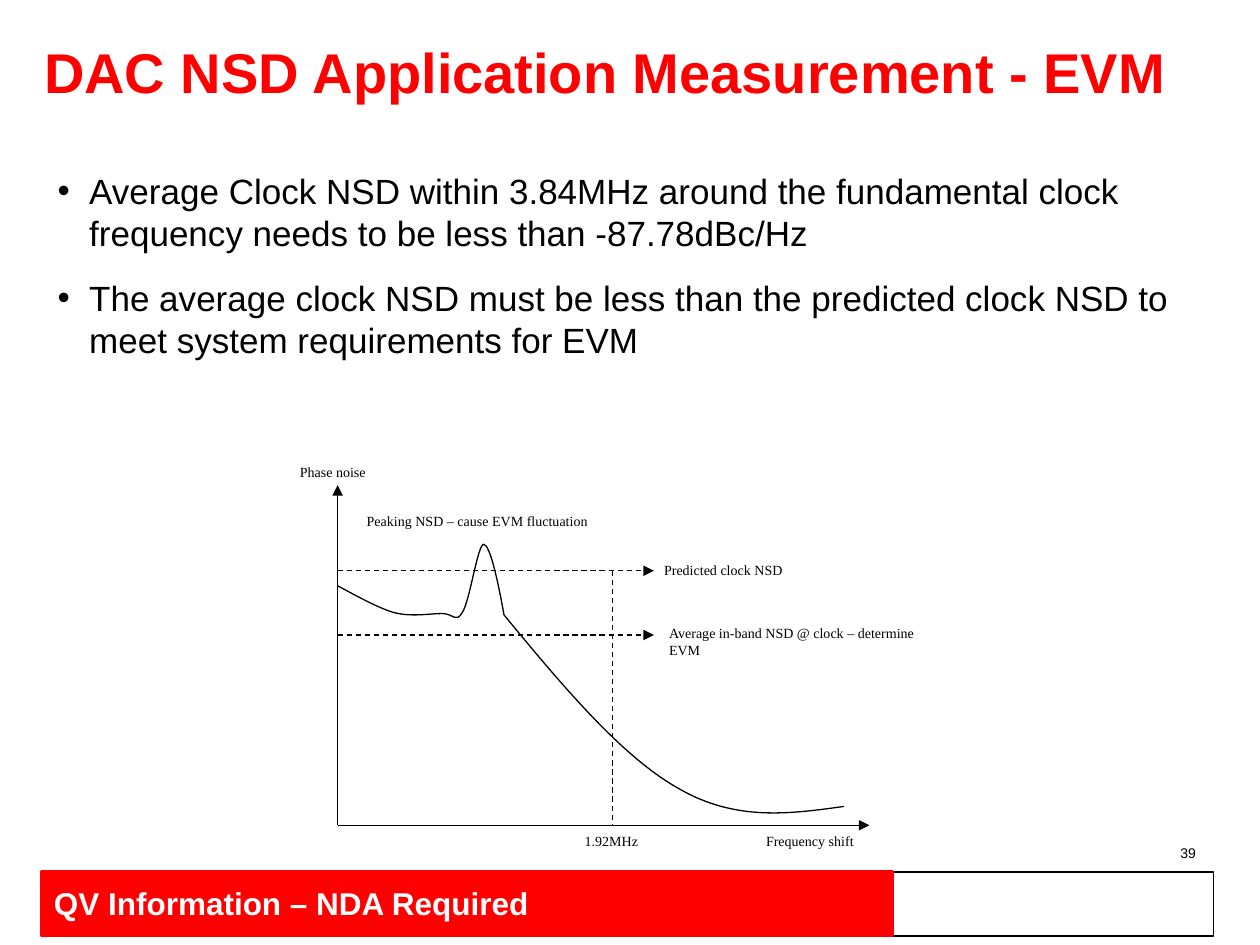
from lxml.etree import SubElement
from pptx import Presentation
from pptx.dml.color import RGBColor
from pptx.enum.dml import MSO_LINE
from pptx.enum.shapes import MSO_CONNECTOR, MSO_SHAPE
from pptx.enum.text import MSO_ANCHOR, PP_ALIGN
from pptx.oxml.ns import qn
from pptx.util import Inches, Pt

RED, BLACK, WHITE = "FF0000", "000000", "FFFFFF"
SANS, SERIF = "Arial", "Times New Roman"

# Plot geometry in inches
AXIS_X, AXIS_Y = 2.68, 6.55
AXIS_TOP, AXIS_RIGHT = 3.85, 6.9
PREDICTED_Y, AVERAGE_Y = 4.53, 5.04
BAND_EDGE_X, LEVEL_END_X = 4.86, 5.19

# Each curve: start point, then (control, control, end) for every segment
PEAK_CURVE = ((2.68, 4.65), [
    ((2.83, 4.73), (2.99, 4.82), (3.12, 4.86)),
    ((3.26, 4.90), (3.41, 4.87), (3.51, 4.87)),
    ((3.60, 4.87), (3.62, 4.95), (3.67, 4.86)),
    ((3.73, 4.77), (3.79, 4.32), (3.84, 4.32)),
    ((3.89, 4.33), (3.95, 4.60), (4.00, 4.88)),
])
FALLING_CURVE = ((4.0, 4.88), [
    ((4.47, 5.45), (4.94, 6.01), (5.39, 6.26)),
    ((5.84, 6.52), (6.27, 6.46), (6.70, 6.40)),
])

# Plot labels: text, left, top, width
LABELS = [
    ("Predicted clock NSD", 5.2, 4.43, 1.18),
    ("Peaking NSD – cause EVM fluctuation", 2.84, 4.04, 2.34),
    ("1.92MHz", 4.57, 6.58, 0.58),
    ("Average in-band NSD @ clock – determine EVM", 5.24, 4.93, 2.1),
    ("Phase noise", 2.31, 3.65, 0.77),
    ("Frequency shift", 6.01, 6.58, 1.03),
]

BULLETS = [
    "Average Clock NSD within 3.84MHz around the fundamental clock "
    "frequency needs to be less than -87.78dBc/Hz",
    "The average clock NSD must be less than the predicted clock NSD to "
    "meet system requirements for EVM",
]


def color(hex_value):
    return RGBColor.from_string(hex_value)


def style_font(paragraph, size, name=SANS, hex_value=BLACK, bold=False):
    font = paragraph.font
    font.size, font.name, font.bold = Pt(size), name, bold
    font.color.rgb = color(hex_value)


def style_line(line, width=0.75, hex_value=BLACK):
    line.color.rgb = color(hex_value)
    line.width = Pt(width)


def add_text_frame(slide, left, top, width, height):
    box = slide.shapes.add_textbox(*map(Inches, (left, top, width, height)))
    box.text_frame.word_wrap = True
    return box.text_frame


def add_bar(slide, left, top, width, height, line_width, fill=None):
    bar = slide.shapes.add_shape(
        MSO_SHAPE.RECTANGLE, *map(Inches, (left, top, width, height)))
    bar.shadow.inherit = False
    if fill:
        bar.fill.solid()
        bar.fill.fore_color.rgb = color(fill)
    else:
        bar.fill.background()
    style_line(bar.line, line_width, fill or BLACK)
    return bar


def add_footer(slide):
    add_bar(slide, 0.37, 6.92, 9.26, 0.51, 0.75)
    frame = add_bar(slide, 0.33, 6.92, 6.75, 0.5, 2, RED).text_frame
    frame.vertical_anchor = MSO_ANCHOR.MIDDLE
    paragraph = frame.paragraphs[0]
    paragraph.text = "QV Information – NDA Required"
    paragraph.alignment = PP_ALIGN.LEFT
    style_font(paragraph, 18, hex_value=WHITE, bold=True)


def add_title(slide, text):
    title = slide.shapes.title
    title.left, title.top, title.width, title.height = map(
        Inches, (0.25, 0.16, 9.25, 0.89))
    title.text_frame.vertical_anchor = MSO_ANCHOR.MIDDLE
    paragraph = title.text_frame.paragraphs[0]
    paragraph.text = text
    paragraph.alignment = PP_ALIGN.LEFT
    paragraph.line_spacing = 0.85
    style_font(paragraph, 32, hex_value=RED, bold=True)


def add_bullets(slide, texts):
    frame = add_text_frame(slide, 0.36, 1.3, 9.26, 5.13)
    for index, text in enumerate(texts):
        paragraph = frame.add_paragraph() if index else frame.paragraphs[0]
        paragraph.text = text
        if index:
            paragraph.space_before = Pt(13)
        properties = paragraph._p.get_or_add_pPr()
        properties.set("marL", str(Inches(0.25)))
        properties.set("indent", str(-Inches(0.25)))
        SubElement(properties, qn("a:buFont"), typeface=SANS)
        SubElement(properties, qn("a:buChar"), char="•")
        style_font(paragraph, 20)


def add_page_number(slide, number):
    paragraph = add_text_frame(slide, 7.26, 6.65, 2.33, 0.23).paragraphs[0]
    paragraph.text = number
    paragraph.alignment = PP_ALIGN.RIGHT
    style_font(paragraph, 8)


def add_line(slide, start, end, dashed=False, arrow=True):
    connector = slide.shapes.add_connector(
        MSO_CONNECTOR.STRAIGHT, *map(Inches, (*start, *end)))
    style_line(connector.line)
    if dashed:
        connector.line.dash_style = MSO_LINE.DASH
    if arrow:
        SubElement(connector.line._get_or_add_ln(), qn("a:tailEnd"),
                   type="triangle")
    SubElement(connector._element.spPr, qn("a:effectLst"))


def add_curve(slide, start, segments):
    builder = slide.shapes.build_freeform(*map(Inches, start))
    builder.add_line_segments(
        [tuple(map(Inches, segment[-1])) for segment in segments], close=False)
    curve = builder.convert_to_shape()
    # Turn each straight step into a Bezier segment
    steps = list(curve._element.iter(qn("a:lnTo")))
    for step, segment in zip(steps, segments):
        step.tag = qn("a:cubicBezTo")
        step.remove(step[0])
        for x, y in segment:
            SubElement(step, qn("a:pt"), x=str(Inches(x) - curve.left),
                       y=str(Inches(y) - curve.top))
    curve.shadow.inherit = False
    curve.fill.background()
    style_line(curve.line)


def add_label(slide, text, left, top, width):
    frame = add_text_frame(slide, left, top, width, 0.21)
    frame.margin_left = frame.margin_right = Inches(0.07)
    frame.margin_top = frame.margin_bottom = Inches(0.03)
    paragraph = frame.paragraphs[0]
    paragraph.text = text
    style_font(paragraph, 8, SERIF)


def add_plot(slide):
    # Axes
    origin = (AXIS_X, AXIS_Y)
    add_line(slide, origin, (AXIS_X, AXIS_TOP))
    add_line(slide, origin, (AXIS_RIGHT, AXIS_Y))
    # Noise curve
    for start, segments in (PEAK_CURVE, FALLING_CURVE):
        add_curve(slide, start, segments)
    # Noise levels and band edge
    for level in (PREDICTED_Y, AVERAGE_Y):
        add_line(slide, (AXIS_X, level), (LEVEL_END_X, level), dashed=True)
    add_line(slide, (BAND_EDGE_X, PREDICTED_Y), (BAND_EDGE_X, AXIS_Y),
             dashed=True, arrow=False)
    for label in LABELS:
        add_label(slide, *label)


def main():
    presentation = Presentation()
    presentation.slide_width, presentation.slide_height = Inches(10), Inches(7.5)
    slide = presentation.slides.add_slide(presentation.slide_layouts[5])
    add_footer(slide)
    add_title(slide, "DAC NSD Application Measurement - EVM")
    add_bullets(slide, BULLETS)
    add_page_number(slide, "39")
    add_plot(slide)
    presentation.save("out.pptx")


if __name__ == "__main__":
    main()
